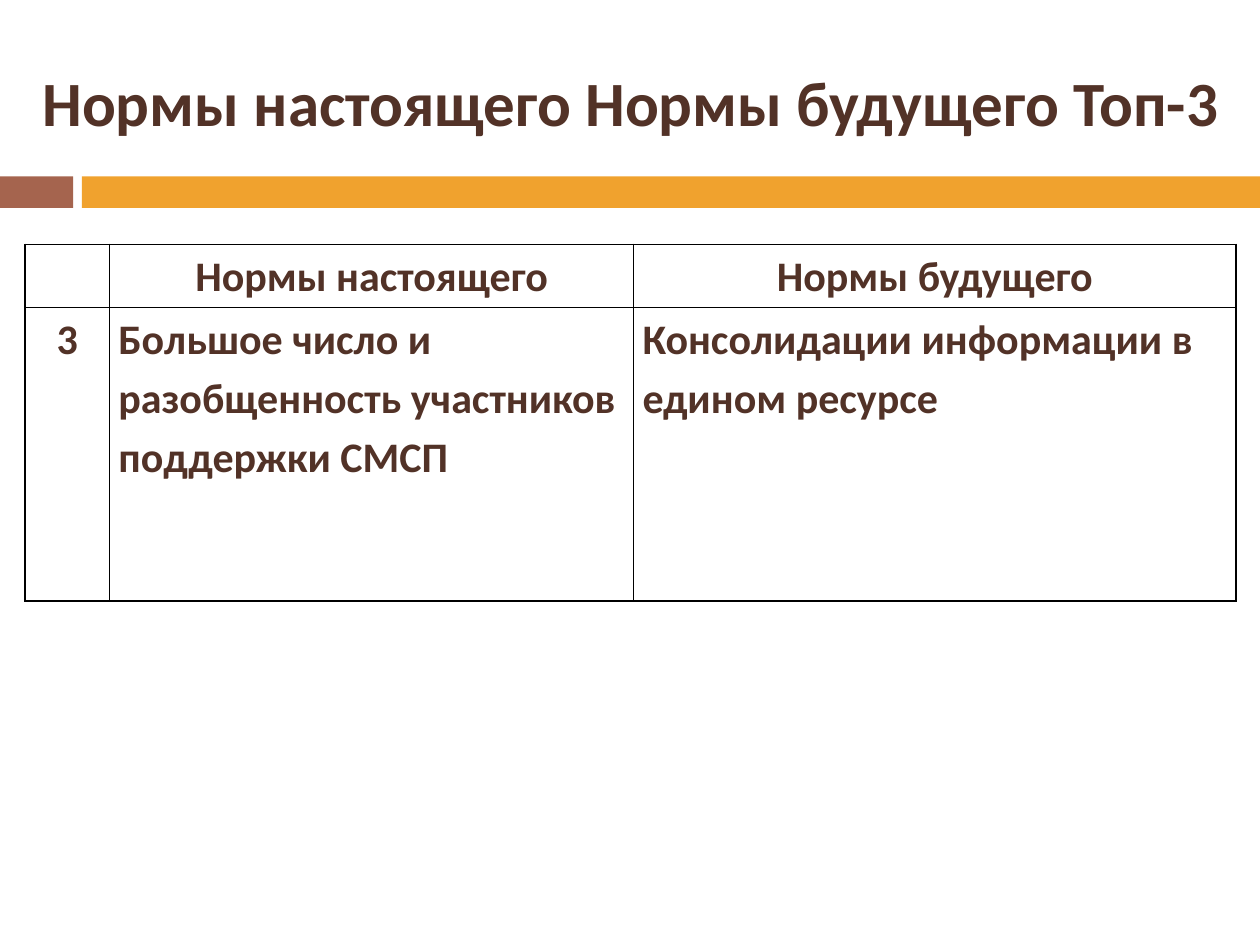
from lxml import etree
from pptx import Presentation, util as u
from pptx.dml.color import RGBColor
from pptx.enum import shapes, text
from pptx.oxml.ns import qn

TITLE = "Нормы настоящего Нормы будущего Топ-3"
ROWS = [
    ("", "Нормы настоящего", "Нормы будущего"),
    ("3", "Большое число и разобщенность участников поддержки СМСП",
     "Консолидации информации в едином ресурсе"),
]
COLORS = {"text": "523227", "accent": "A5644E", "band": "F0A22E", "border": "000000"}
FONT = "Calibri"
WIDTH, HEIGHT = 10, 7.5
BAND_TOP, BAND_HEIGHT = 1.4, 0.25
BANDS = [(0, 0.58, "accent"), (0.65, WIDTH - 0.65, "band")]
TITLE_BOX = (0.16, 0.23, 9.69, 1.14)
TABLE_AT = (0.2, 1.94)
COLUMN_WIDTHS = (0.67, 4.16, 4.78)
ROW_HEIGHTS = (0.5, 2.33)


def inches(*lengths):
    return [u.Inches(length) for length in lengths]


def write(paragraph, words, size, align):
    paragraph.alignment = align
    run = paragraph.add_run()
    run.text = words
    run.font.name, run.font.size, run.font.bold = FONT, u.Pt(size), True
    run.font.color.rgb = RGBColor.from_string(COLORS["text"])


def add_borders(cell):
    """Put a 1 pt line on each side; lines must come before the cell's fill."""
    properties = cell._tc.get_or_add_tcPr()
    for position, side in enumerate(("lnL", "lnR", "lnT", "lnB")):
        line = etree.Element(qn(f"a:{side}"), w=str(u.Pt(1)))
        fill = etree.SubElement(line, qn("a:solidFill"))
        etree.SubElement(fill, qn("a:srgbClr"), val=COLORS["border"])
        properties.insert(position, line)


def add_bands(slide):
    for left, width, color in BANDS:
        band = slide.shapes.add_shape(
            shapes.MSO_SHAPE.RECTANGLE, *inches(left, BAND_TOP, width, BAND_HEIGHT))
        band.shadow.inherit = False
        band.fill.solid()
        band.fill.fore_color.rgb = RGBColor.from_string(COLORS[color])
        band.line.fill.background()


def add_title(slide):
    title = slide.shapes.title
    title.left, title.top, title.width, title.height = inches(*TITLE_BOX)
    frame = title.text_frame
    frame.word_wrap = True
    frame.auto_size = text.MSO_AUTO_SIZE.NONE
    frame.vertical_anchor = text.MSO_ANCHOR.MIDDLE
    write(frame.paragraphs[0], TITLE, 36, text.PP_ALIGN.CENTER)


def add_norms(slide):
    size = sum(COLUMN_WIDTHS), sum(ROW_HEIGHTS)
    norms = slide.shapes.add_table(
        len(ROWS), len(COLUMN_WIDTHS), *inches(*TABLE_AT, *size)).table
    norms.first_row = norms.horz_banding = False
    for column, width in zip(norms.columns, COLUMN_WIDTHS):
        column.width = u.Inches(width)
    for row, height in zip(norms.rows, ROW_HEIGHTS):
        row.height = u.Inches(height)
    for r, row in enumerate(ROWS):
        for c, words in enumerate(row):
            cell = norms.cell(r, c)
            cell.fill.background()
            cell.margin_left = cell.margin_right = u.Inches(0.07)
            cell.margin_top = cell.margin_bottom = 0
            add_borders(cell)
            if words:
                paragraph = cell.text_frame.paragraphs[0]
                paragraph.line_spacing = 1.15
                centred = r == 0 or c == 0
                write(paragraph, words, 24,
                      text.PP_ALIGN.CENTER if centred else text.PP_ALIGN.LEFT)


def main():
    deck = Presentation()
    deck.slide_width, deck.slide_height = inches(WIDTH, HEIGHT)
    slide = deck.slides.add_slide(deck.slide_layouts[5])
    add_bands(slide)
    add_title(slide)
    add_norms(slide)
    deck.save("out.pptx")


if __name__ == "__main__":
    main()
